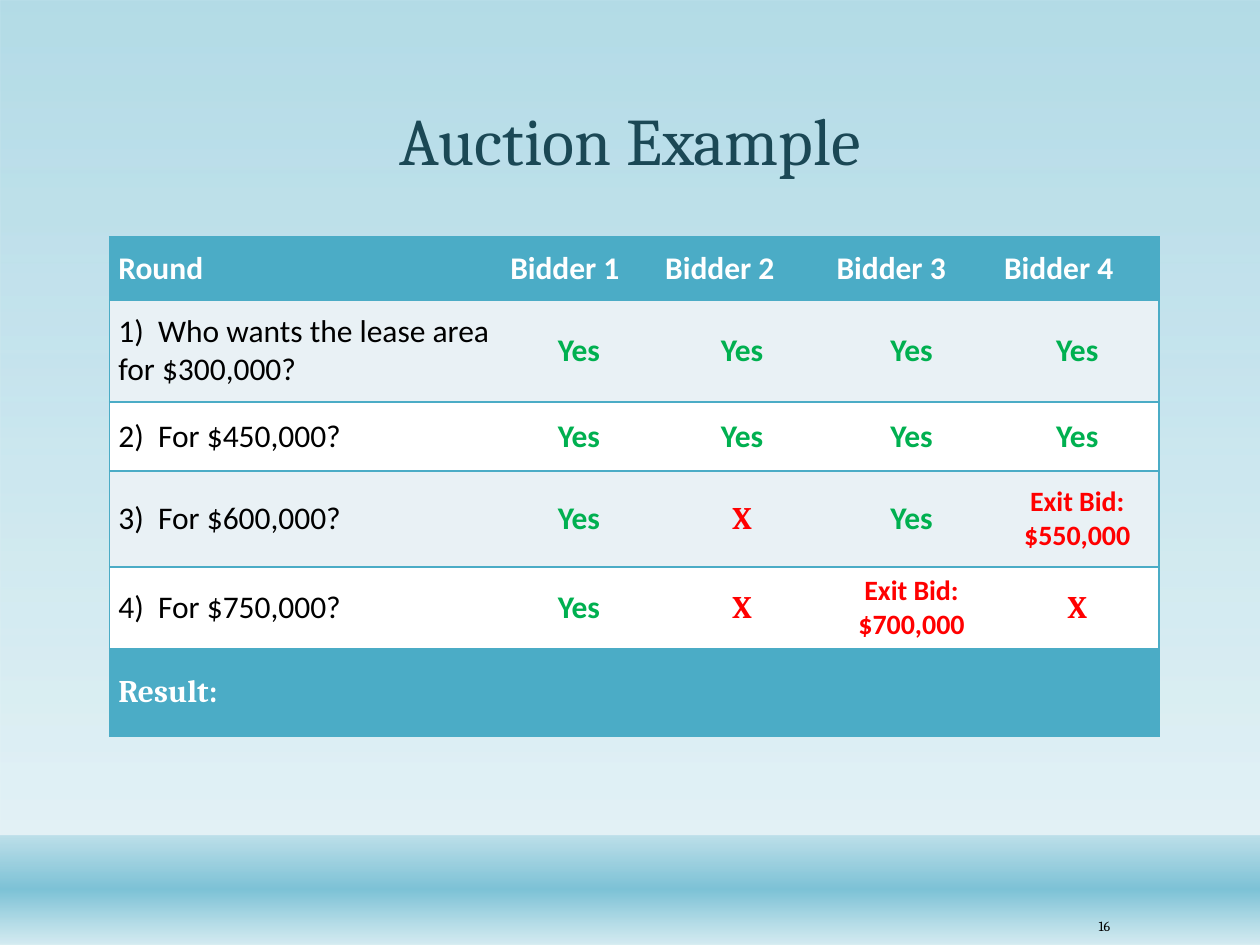
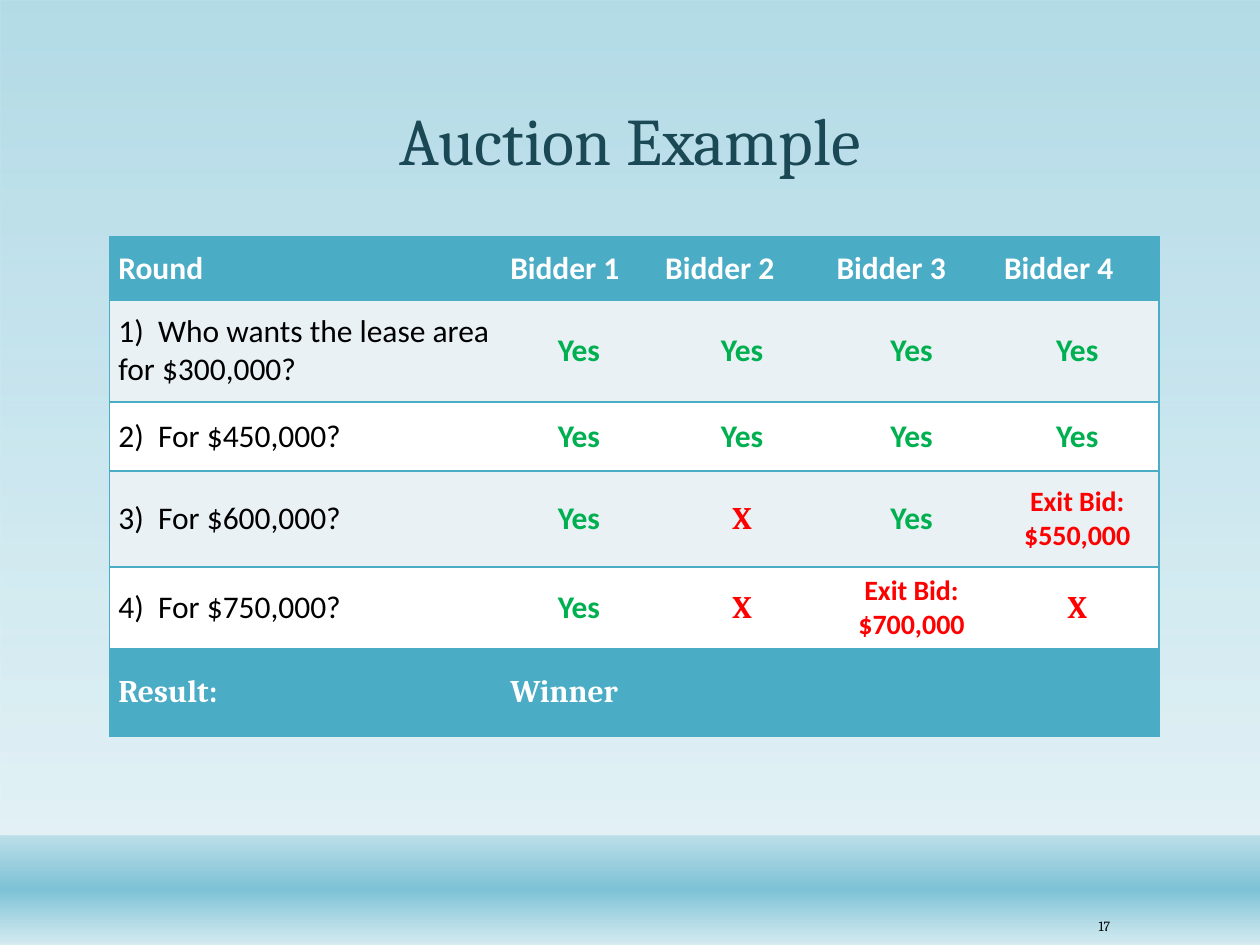
import pptx
import pptx.util
import pptx.dml.color
import pptx.enum.shapes
import pptx.enum.text
import pptx.oxml
import pptx.oxml.ns
from dataclasses import dataclass
from lxml import etree

Inches = pptx.util.Inches
Pt = pptx.util.Pt
Align = pptx.enum.text.PP_ALIGN
Anchor = pptx.enum.text.MSO_ANCHOR
qn = pptx.oxml.ns.qn


@dataclass(frozen=True)
class Theme:
    # Colours
    title: str = "1B4855"
    accent: str = "4BACC6"
    stripe: str = "E9F1F5"
    white: str = "FFFFFF"
    black: str = "000000"
    yes: str = "00B050"
    no: str = "FF0000"
    water: str = "7DC2D6"
    mist: str = "D4EBF1"
    # Fonts and type sizes
    serif: str = "Cambria"
    sans: str = "Calibri"
    title_size: int = 38
    table_size: int = 18
    exit_size: int = 16
    number_size: int = 8
    # Table style without borders or fills
    plain_table: str = "{2D5ABB26-0587-4C30-8999-92F81FD0307C}"


# Table content and grid
COLUMN_WIDTHS = [3.11, 1.23, 1.36, 1.33, 1.3]
ROW_HEIGHTS = [0.5, 0.81, 0.55, 0.76, 0.65, 0.69]
HEADER = ["Round", "Bidder 1", "Bidder 2", "Bidder 3", "Bidder 4"]
ROUNDS = [
    ["1)  Who wants the lease area for $300,000?", "Yes", "Yes", "Yes", "Yes"],
    ["2)  For $450,000?", "Yes", "Yes", "Yes", "Yes"],
    ["3)  For $600,000?", "Yes", "X", "Yes", "Exit Bid:\n$550,000"],
    ["4)  For $750,000?", "Yes", "X", "Exit Bid:\n$700,000", "X"],
]


class Deck:
    def __init__(self, theme):
        self.theme = theme
        self.prs = pptx.Presentation()
        self.prs.slide_width = Inches(10)
        self.prs.slide_height = Inches(7.5)
        self.s = None

    def new_slide(self, title, number):
        t = self.theme
        self.s = self.prs.slides.add_slide(self.prs.slide_layouts[5])
        # Background wash and bottom band: position %, colour, opacity %
        self.band(0, 7.5, [(0, t.water, 58), (88, t.mist, 65)])
        self.band(6.63, 0.87, [(1, t.water, 38), (49, t.water, 100), (100, t.mist, 89)])
        self.title(title)
        self.page_number(number)

    def band(self, top, height, stops):
        sp = self.s.shapes.add_shape(pptx.enum.shapes.MSO_SHAPE.RECTANGLE,
                                     0, Inches(top), self.prs.slide_width, Inches(height))
        sp.shadow.inherit = False
        sp.line.fill.background()
        sp.fill.gradient()
        sp.fill.gradient_angle = 270
        stop_list = sp._element.spPr.find(".//" + qn("a:gsLst"))
        for old in list(stop_list):
            stop_list.remove(old)
        for position, color, opacity in stops:
            gs = etree.SubElement(stop_list, qn("a:gs"), pos=str(position * 1000))
            clr = etree.SubElement(gs, qn("a:srgbClr"), val=color)
            etree.SubElement(clr, qn("a:alpha"), val=str(opacity * 1000))

    def run(self, p, text, size, color, font, bold=False):
        r = p.add_run()
        r.text = text
        r.font.size = Pt(size)
        r.font.name = font
        r.font.bold = bold
        r.font.color.rgb = pptx.dml.color.RGBColor.from_string(color)

    def title(self, text):
        t = self.theme
        sp = self.s.shapes.title
        sp.left, sp.top, sp.width, sp.height = map(Inches, (1.1, 0.29, 7.8, 1.19))
        self.s.shapes._spTree.append(sp._element)  # in front of the bands
        tf = sp.text_frame
        tf.auto_size = pptx.enum.text.MSO_AUTO_SIZE.NONE
        tf.vertical_anchor = Anchor.BOTTOM
        p = tf.paragraphs[0]
        p.alignment = Align.CENTER
        p.line_spacing = 0.9
        self.run(p, text, t.title_size, t.title, t.serif)

    def page_number(self, number):
        t = self.theme
        sp = self.s.shapes.add_textbox(*map(Inches, (8.38, 7.22, 0.53, 0.26)))
        tf = sp.text_frame
        tf.word_wrap = True
        tf.vertical_anchor = Anchor.MIDDLE
        p = tf.paragraphs[0]
        p.alignment = Align.RIGHT
        self.run(p, str(number), t.number_size, t.black, t.serif)

    def table(self, left, top, rows):
        t = self.theme
        frame = self.s.shapes.add_table(
            len(rows), len(COLUMN_WIDTHS), Inches(left), Inches(top),
            Inches(sum(COLUMN_WIDTHS)), Inches(sum(ROW_HEIGHTS)))
        table = frame.table
        table.first_row = table.horz_banding = False
        table._tbl.tblPr.find(qn("a:tableStyleId")).text = t.plain_table
        for column, width in zip(table.columns, COLUMN_WIDTHS):
            column.width = Inches(width)
        for row, height in zip(table.rows, ROW_HEIGHTS):
            row.height = Inches(height)

        last_row, last_col = len(rows) - 1, len(COLUMN_WIDTHS) - 1
        for i, texts in enumerate(rows):
            is_edge = i in (0, last_row)
            fill = t.accent if is_edge else t.stripe if i % 2 else t.white
            for j, text in enumerate(texts):
                cell = table.cell(i, j)
                sides = "L" * (j == 0) + "R" * (j == last_col) + "TB"
                self.cell_frame(cell, fill, sides)
                if is_edge:
                    font = t.serif if i else t.sans
                    style = (t.table_size, t.white, font, True)
                else:
                    style = self.round_style(text, j)
                centred = not is_edge and j > 0
                self.cell_text(cell, text, style, centred)

    def round_style(self, text, col):
        t = self.theme
        if col == 0:
            return t.table_size, t.black, t.sans, False
        if text == "Yes":
            return t.table_size, t.yes, t.sans, True
        if text == "X":
            return t.table_size, t.no, t.serif, True
        return t.exit_size, t.no, t.sans, True

    def cell_frame(self, cell, fill, sides):
        cell.vertical_anchor = Anchor.MIDDLE
        cell.margin_left = cell.margin_right = Inches(0.07)
        cell.margin_top = cell.margin_bottom = Inches(0.05)
        # Borders come before the fill
        tc_pr = cell._tc.get_or_add_tcPr()
        for side in sides:
            ln = etree.SubElement(tc_pr, qn("a:ln" + side), w=str(Pt(1)))
            solid = etree.SubElement(ln, qn("a:solidFill"))
            etree.SubElement(solid, qn("a:srgbClr"), val=self.theme.accent)
        cell.fill.solid()
        cell.fill.fore_color.rgb = pptx.dml.color.RGBColor.from_string(fill)
        tc_pr.append(tc_pr.find(qn("a:solidFill")))

    def cell_text(self, cell, text, style, centred):
        if not text:
            return
        tf = cell.text_frame
        for k, line in enumerate(text.split("\n")):
            p = tf.add_paragraph() if k else tf.paragraphs[0]
            p.alignment = Align.CENTER if centred else Align.LEFT
            self.run(p, line, *style)


def main():
    deck = Deck(Theme())
    # The second slide reveals the winner
    for number, result in ((16, ""), (17, "Winner")):
        deck.new_slide("Auction Example", number)
        deck.table(0.87, 1.88, [HEADER, *ROUNDS, ["Result:", result, "", "", ""]])
    deck.prs.save("out.pptx")


if __name__ == "__main__":
    main()
